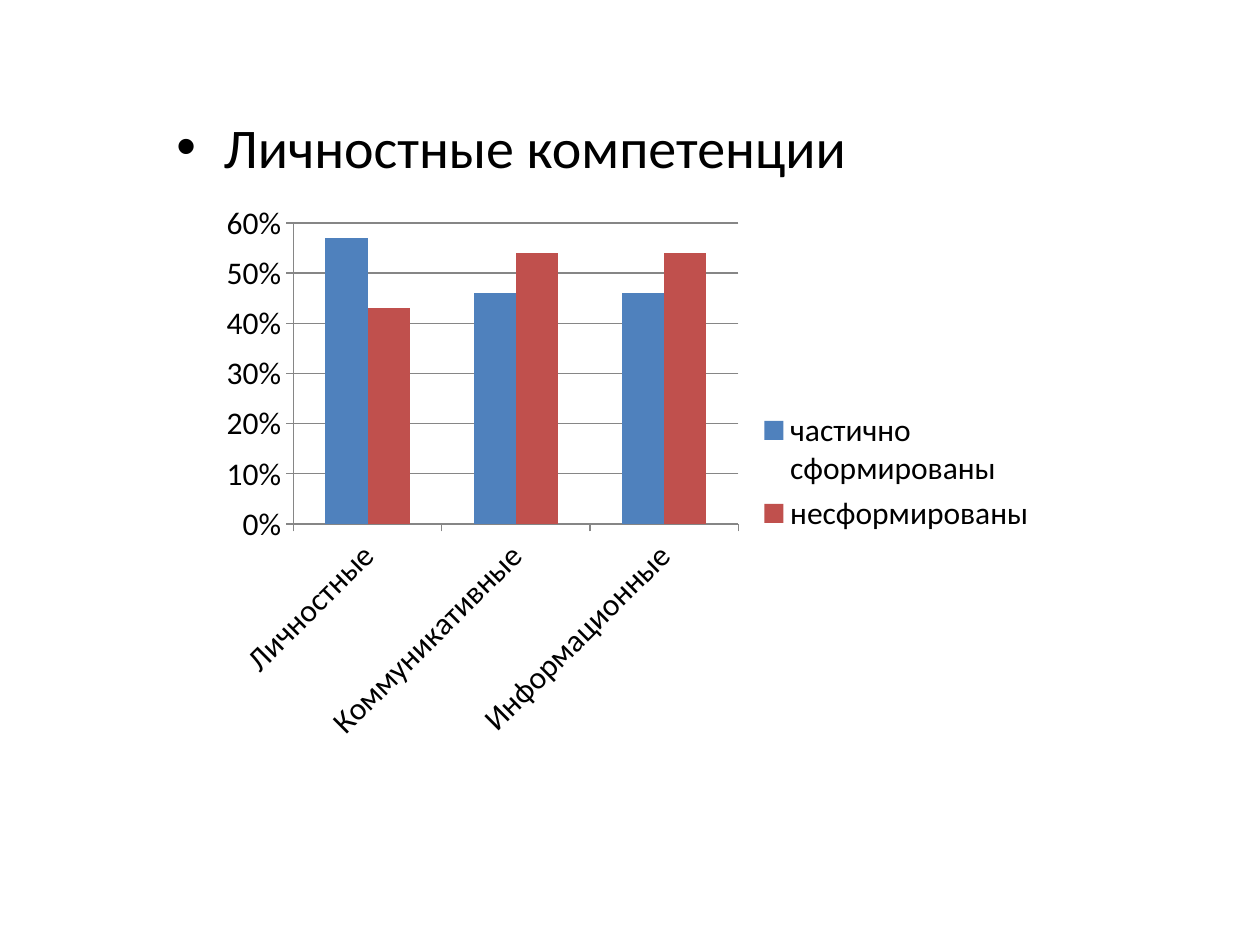
import lxml.etree
import pptx
import pptx.chart.data
import pptx.dml.color
import pptx.enum.chart
import pptx.oxml
import pptx.oxml.ns
import pptx.util
from pptx.util import Inches

BLACK = pptx.dml.color.RGBColor(0x00, 0x00, 0x00)
GRAY = pptx.dml.color.RGBColor(0x86, 0x86, 0x86)
BLUE = pptx.dml.color.RGBColor(0x4F, 0x81, 0xBD)
RED = pptx.dml.color.RGBColor(0xC0, 0x50, 0x4D)
FONT = "Calibri"

CATEGORIES = ("Личностные", "Коммуникативные", "Информационные")
SERIES = (
    ("частично сформированы", (0.57, 0.46, 0.46), BLUE),
    ("несформированы", (0.43, 0.54, 0.54), RED),
)


def format_font(font, size):
    for name, value in {"name": FONT, "size": pptx.util.Pt(size)}.items():
        setattr(font, name, value)
    font.color.rgb = BLACK


def set_layout(parent, index, part_box, chart_box, inner=False):
    """Place a chart part by its box, measured from the chart's corner."""
    qn = pptx.oxml.ns.qn
    for old in parent.findall(qn("c:layout")):
        parent.remove(old)
    layout = lxml.etree.Element(qn("c:layout"))
    manual = lxml.etree.SubElement(layout, qn("c:manualLayout"))
    values = {"layoutTarget": "inner"} if inner else {}
    values.update(xMode="edge", yMode="edge")
    width, height = chart_box[2:]
    for name, length, whole in zip("xywh", part_box, (width, height) * 2):
        values[name] = length / whole
    for name, value in values.items():
        lxml.etree.SubElement(manual, qn("c:" + name)).set("val", str(value))
    parent.insert(index, layout)


def add_heading(page, box):
    body = page.placeholders[1]
    for name, value in zip(("left", "top", "width", "height"), box):
        setattr(body, name, value)
    para = body.text_frame.paragraphs[0]
    properties = para._p.get_or_add_pPr()
    hanging = pptx.util.Pt(27)
    properties.set("marL", str(hanging))
    properties.set("indent", str(-hanging))
    bullet = lxml.etree.SubElement(properties, pptx.oxml.ns.qn("a:buChar"))
    bullet.set("char", "•")
    para.space_before = pptx.util.Pt(0)
    span = para.add_run()
    span.text = "Личностные компетенции"
    format_font(span.font, 32)


def add_competence_chart(page, box):
    data = pptx.chart.data.CategoryChartData(number_format="0%")
    data.categories = CATEGORIES
    for name, values, _ in SERIES:
        data.add_series(name, values)
    kinds = pptx.enum.chart
    chart = page.shapes.add_chart(
        kinds.XL_CHART_TYPE.COLUMN_CLUSTERED, *box, data).chart
    chart.has_title = False
    format_font(chart.font, 18)

    plot = chart.plots[0]
    for name, value in {"gap_width": 150, "overlap": 0, "vary_by_categories": False}.items():
        setattr(plot, name, value)
    for series, (_, _, color) in zip(plot.series, SERIES):
        series.format.fill.solid()
        series.format.fill.fore_color.rgb = color

    value_axis, category_axis = chart.value_axis, chart.category_axis
    scale = {"minimum_scale": 0, "maximum_scale": 0.6, "major_unit": 0.1,
             "has_major_gridlines": True}
    for name, value in scale.items():
        setattr(value_axis, name, value)
    value_axis.tick_labels.number_format = "0%"
    value_axis.tick_labels.number_format_is_linked = False
    for axis in (value_axis, category_axis):
        axis.major_tick_mark = kinds.XL_TICK_MARK.OUTSIDE
        axis.minor_tick_mark = kinds.XL_TICK_MARK.NONE
    for part in (value_axis, category_axis, value_axis.major_gridlines):
        part.format.line.color.rgb = GRAY
        part.format.line.width = pptx.util.Pt(0.75)
    format_font(category_axis.tick_labels.font, 18)
    text = category_axis._element.find(pptx.oxml.ns.qn("c:txPr"))
    text.find(pptx.oxml.ns.qn("a:bodyPr")).set("rot", str(-45 * 60000))

    chart.has_legend = True
    legend = chart.legend
    legend.position = kinds.XL_LEGEND_POSITION.RIGHT
    legend.include_in_layout = False
    format_font(legend.font, 18)
    legend_box = [Inches(n) for n in (4.31, 1.68, 2.27, 1.07)]
    set_layout(legend._element, 1, legend_box, box)
    plot_box = [Inches(n) for n in (0.66, 0.24, 3.53, 2.39)]
    area = chart._chartSpace.chart.plotArea
    set_layout(area, 0, plot_box, box, inner=True)


def main():
    deck = pptx.Presentation()
    deck.slide_width, deck.slide_height = Inches(10), Inches(7.5)
    page = deck.slides.add_slide(deck.slide_layouts[1])
    title = page.shapes.title._element
    title.getparent().remove(title)
    add_heading(page, [Inches(n) for n in (1.3, 0.84, 8.2, 6.26)])
    add_competence_chart(page, [Inches(n) for n in (1.67, 1.53, 6.67, 4.44)])
    deck.save("out.pptx")


if __name__ == "__main__":
    main()
